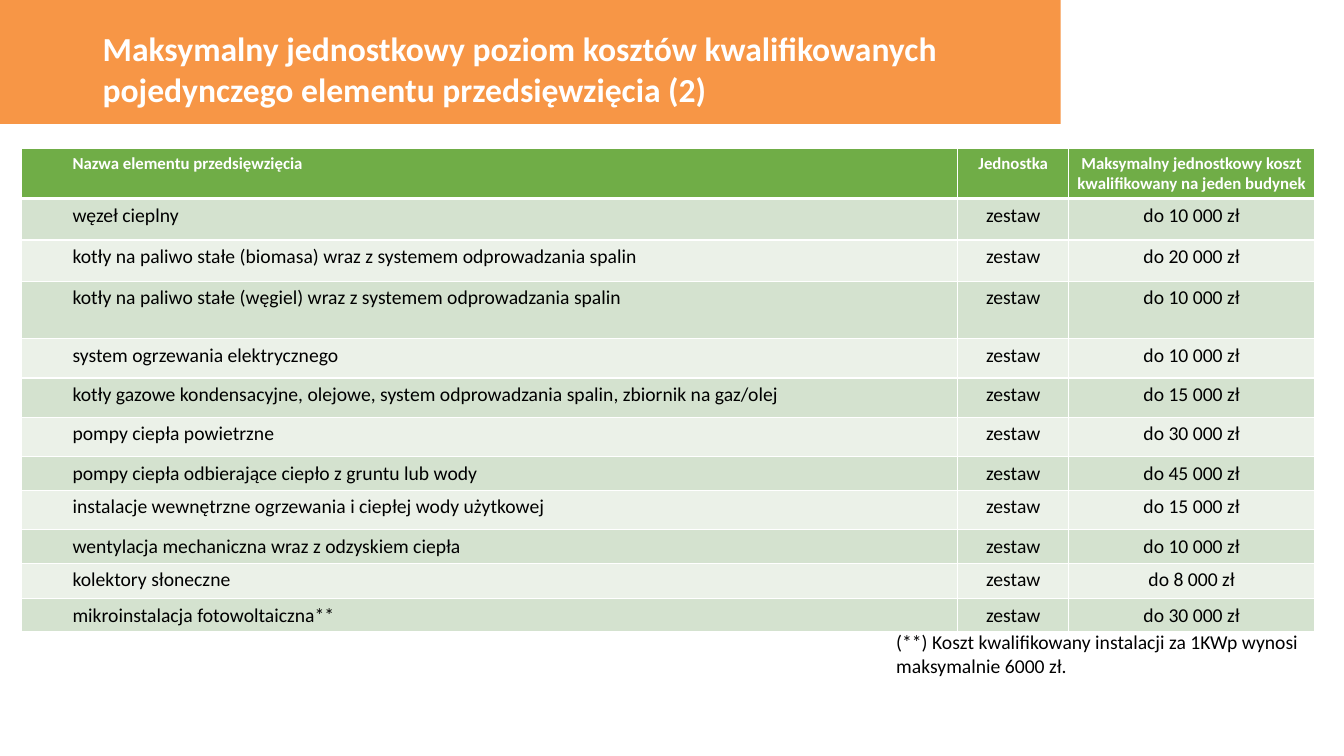
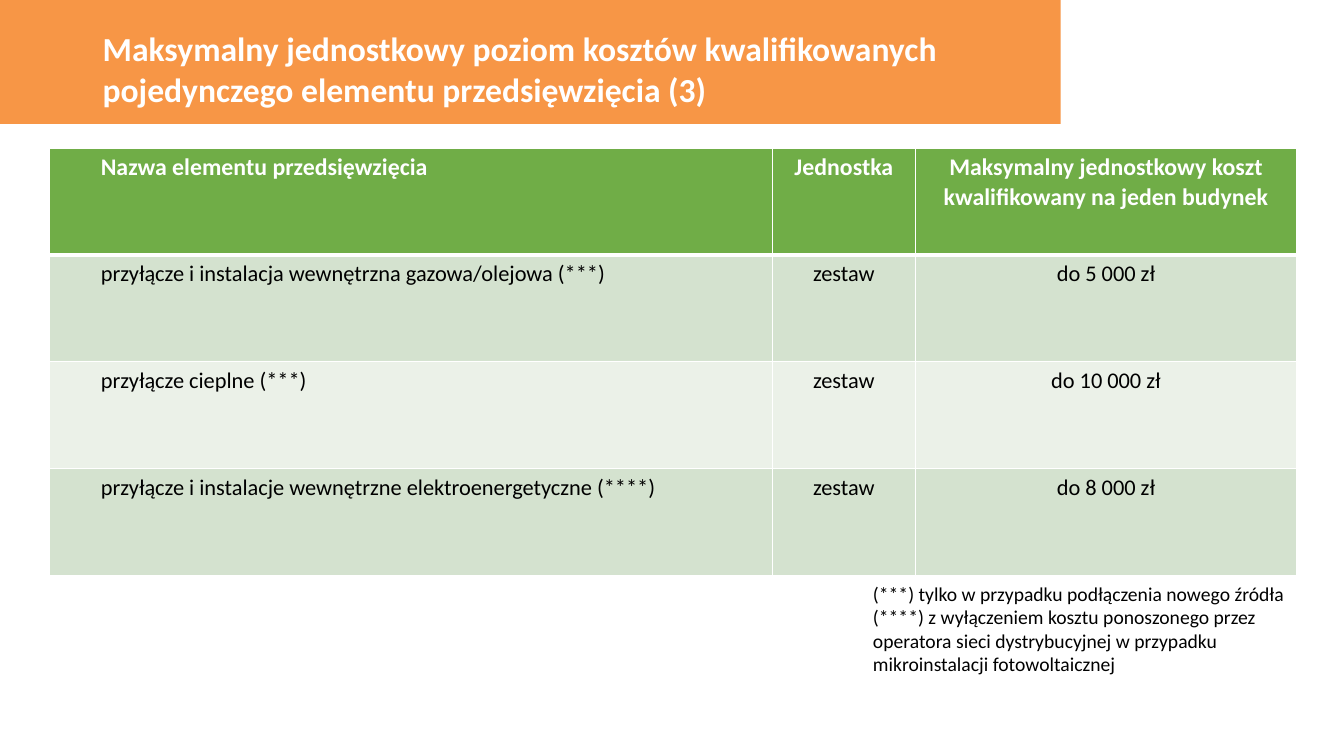
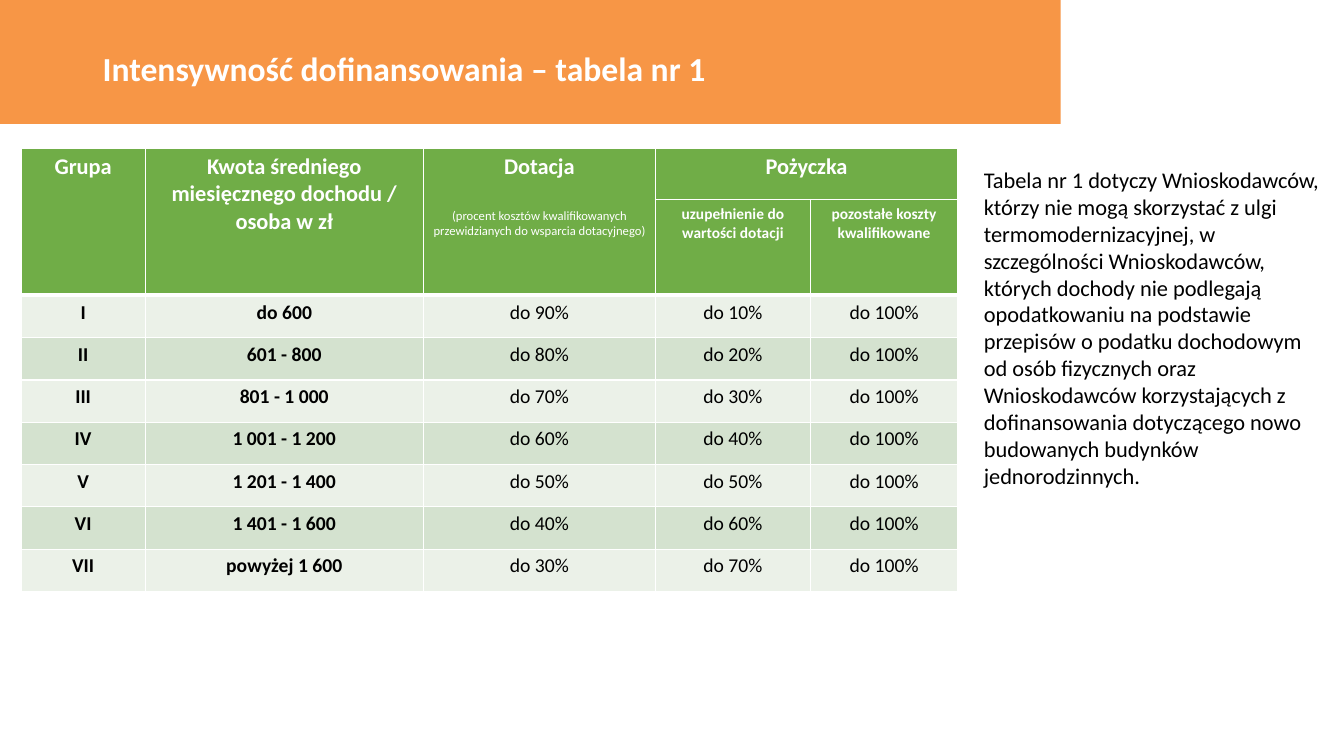
"""Build three slides on eligible cost limits and the intensity of co-financing."""
from dataclasses import dataclass
from typing import Any, Optional

from lxml import etree
from pptx import Presentation
from pptx.dml.color import RGBColor
from pptx.enum.shapes import MSO_SHAPE as Preset
from pptx.enum.text import MSO_ANCHOR as Anchor, PP_ALIGN as Align
from pptx.oxml.ns import qn
from pptx.util import Inches, Pt

COLORS = {
    "band": "F79646",
    "head": "70AD47",
    "dark_row": "D4E2CF",
    "light_row": "EBF1E8",
    "white": "FFFFFF",
    "ink": "000000",
}
FONT = "Calibri"
TABLE_TOP = 1.47
THIN, THICK = 0.96, 3
CELL_FORMAT = {
    "margin_left": Inches(0.01),
    "margin_right": Inches(0.01),
    "margin_top": Inches(0.05),
    "margin_bottom": Inches(0.05),
    "vertical_anchor": Anchor.TOP,
}
BOX_FORMAT = {
    "margin_left": Inches(0.1),
    "margin_right": Inches(0.1),
    "margin_top": Inches(0.05),
    "margin_bottom": Inches(0.05),
    "word_wrap": True,
}


@dataclass(frozen=True)
class Line:
    text: str
    size: float
    bold: bool = False
    color: str = "ink"
    before: float = 0


@dataclass(frozen=True)
class Note:
    left: float
    top: float
    width: float
    height: float
    lines: list[Line]


@dataclass(frozen=True)
class CostTable:
    left: float
    widths: list[float]
    heights: list[float]
    head: list[list[list[Line]]]
    body: list[list[str]]
    body_size: float
    bold_columns: int = 0
    name_indent: Optional[float] = None
    merges: tuple[tuple[int, int, int, int], ...] = ()


@dataclass(frozen=True)
class Page:
    title: str
    table: CostTable
    note: Note


def apply_format(target: Any, values: dict[str, Any]) -> None:
    for attribute, value in values.items():
        setattr(target, attribute, value)


def rgb(color: str) -> RGBColor:
    return RGBColor.from_string(COLORS[color])


def write_lines(frame: Any, lines: list[Line], align: Align = Align.LEFT) -> None:
    for index, line in enumerate(lines):
        paragraph = frame.paragraphs[0] if index == 0 else frame.add_paragraph()
        paragraph.alignment = align
        if line.before:
            paragraph.space_before = Pt(line.before)
        run = paragraph.add_run()
        run.text = line.text
        apply_format(run.font, {"name": FONT, "size": Pt(line.size), "bold": line.bold})
        run.font.color.rgb = rgb(line.color)


def add_text(slide: Any, note: Note, anchor: Anchor = Anchor.TOP) -> None:
    box = slide.shapes.add_textbox(*map(Inches, (note.left, note.top, note.width, note.height)))
    apply_format(box.text_frame, BOX_FORMAT | {"vertical_anchor": anchor})
    write_lines(box.text_frame, note.lines)


def add_title(slide: Any, title: str) -> None:
    band = slide.shapes.add_shape(Preset.RECTANGLE, 0, 0, Inches(10.52), Inches(1.23))
    band.shadow.inherit = False
    band.fill.solid()
    band.fill.fore_color.rgb = rgb("band")
    band.line.fill.background()
    add_text(slide, Note(0.92, 0.21, 9.53, 0.94, [Line(title, 24, True, "white")]), Anchor.MIDDLE)


def set_borders(cell: Any, top: float, bottom: float) -> None:
    properties = cell._tc.get_or_add_tcPr()
    for tag, width in (("lnL", THIN), ("lnR", THIN), ("lnT", top), ("lnB", bottom)):
        edge = etree.SubElement(properties, qn(f"a:{tag}"), w=str(Pt(width)))
        fill = etree.SubElement(edge, qn("a:solidFill"))
        etree.SubElement(fill, qn("a:srgbClr"), val=COLORS["white"])


def add_cost_table(slide: Any, spec_table: CostTable) -> None:
    head_count = len(spec_table.head)
    body = [
        [[Line(text, spec_table.body_size, column < spec_table.bold_columns)]
         for column, text in enumerate(row)]
        for row in spec_table.body
    ]
    rows = spec_table.head + body
    grid = slide.shapes.add_table(
        len(rows), len(spec_table.widths), Inches(spec_table.left), Inches(TABLE_TOP),
        Inches(sum(spec_table.widths)), Inches(sum(spec_table.heights)),
    ).table
    for column, width in zip(grid.columns, spec_table.widths):
        column.width = Inches(width)
    for row, height in zip(grid.rows, spec_table.heights):
        row.height = Inches(height)
    for first_row, first_column, last_row, last_column in spec_table.merges:
        grid.cell(first_row, first_column).merge(grid.cell(last_row, last_column))

    for row_index, row in enumerate(rows):
        stripe = "dark_row" if row_index % 2 else "light_row"
        for column_index, lines in enumerate(row):
            cell = grid.cell(row_index, column_index)
            closes_head = row_index + cell.span_height == head_count
            set_borders(
                cell,
                THICK if row_index == head_count else THIN,
                THICK if closes_head else THIN,
            )
            cell.fill.solid()
            cell.fill.fore_color.rgb = rgb("head" if row_index < head_count else stripe)
            apply_format(cell, CELL_FORMAT)
            is_name = column_index == 0 and spec_table.name_indent is not None
            if is_name:
                cell.margin_left = Inches(spec_table.name_indent)
            write_lines(cell.text_frame, lines, Align.LEFT if is_name else Align.CENTER)


def head_line(text: str, size: float) -> list[Line]:
    return [Line(text, size, True, "white")]


def limits_table(left: float, widths: list[float], heights: list[float], head_size: float,
                 body_size: float, limits: list[tuple[str, str]]) -> CostTable:
    headings = (
        "Nazwa elementu przedsięwzięcia",
        "Jednostka",
        "Maksymalny jednostkowy koszt kwalifikowany na jeden budynek",
    )
    return CostTable(
        left, widths, heights,
        head=[[head_line(heading, head_size) for heading in headings]],
        body=[[element, "zestaw", f"do {limit} zł"] for element, limit in limits],
        body_size=body_size,
        name_indent=0.51,
    )


LIMITS_TITLE = "Maksymalny jednostkowy poziom kosztów kwalifikowanych pojedynczego elementu przedsięwzięcia"

HEATING_LIMITS = limits_table(
    0.21, [9.29, 1.1, 2.44],
    [0.41, 0.41, 0.41, 0.57, 0.39, 0.39, 0.39, 0.31, 0.39, 0.31, 0.35, 0.33],
    12, 14,
    [
        ("węzeł cieplny", "10 000"),
        ("kotły na paliwo stałe (biomasa) wraz z systemem odprowadzania spalin", "20 000"),
        ("kotły na paliwo stałe (węgiel) wraz z systemem odprowadzania spalin", "10 000"),
        ("system ogrzewania elektrycznego", "10 000"),
        ("kotły gazowe kondensacyjne, olejowe, system odprowadzania spalin, zbiornik na gaz/olej",
         "15 000"),
        ("pompy ciepła powietrzne", "30 000"),
        ("pompy ciepła odbierające ciepło z gruntu lub wody", "45 000"),
        ("instalacje wewnętrzne ogrzewania i ciepłej wody użytkowej", "15 000"),
        ("wentylacja mechaniczna wraz z odzyskiem ciepła", "10 000"),
        ("kolektory słoneczne", "8 000"),
        ("mikroinstalacja fotowoltaiczna**", "30 000"),
    ],
)

CONNECTION_LIMITS = limits_table(
    0.49, [7.17, 1.42, 3.78], [1.06] * 4, 17, 16,
    [
        ("przyłącze i instalacja wewnętrzna gazowa/olejowa (***)", "5 000"),
        ("przyłącze cieplne (***)", "10 000"),
        ("przyłącze i instalacje wewnętrzne elektroenergetyczne (****)", "8 000"),
    ],
)

INCOME_GROUPS = [
    ("I", "do 600", 90),
    ("II", "601 - 800", 80),
    ("III", "801 - 1 000", 70),
    ("IV", "1 001 - 1 200", 60),
    ("V", "1 201 - 1 400", 50),
    ("VI", "1 401 - 1 600", 40),
    ("VII", "powyżej 1 600", 30),
]

SUPPORT_INTENSITY = CostTable(
    0.21, [1.23, 2.76, 2.3, 1.54, 1.46], [0.51, 0.95] + [0.42] * len(INCOME_GROUPS),
    head=[
        [
            head_line("Grupa", 16),
            head_line("Kwota średniego miesięcznego dochodu / osoba w zł", 16),
            head_line("Dotacja", 16) + [
                Line("(procent kosztów kwalifikowanych przewidzianych do wsparcia dotacyjnego)",
                     9, False, "white", 20),
            ],
            head_line("Pożyczka", 16),
            [],
        ],
        [
            [], [], [],
            head_line("uzupełnienie do wartości dotacji", 11),
            head_line("pozostałe koszty kwalifikowane", 11),
        ],
    ],
    body=[
        [group, income, f"do {grant}%", f"do {100 - grant}%", "do 100%"]
        for group, income, grant in INCOME_GROUPS
    ],
    body_size=14,
    bold_columns=2,
    merges=((0, 0, 1, 0), (0, 1, 1, 1), (0, 2, 1, 2), (0, 3, 0, 4)),
)

PAGES = [
    Page(
        f"{LIMITS_TITLE} (2)",
        HEATING_LIMITS,
        Note(8.79, 6.2, 4.88, 0.56, [
            Line("(**) Koszt kwalifikowany instalacji za 1KWp wynosi maksymalnie 6000 zł.", 14),
        ]),
    ),
    Page(
        f"{LIMITS_TITLE} (3)",
        CONNECTION_LIMITS,
        Note(8.56, 5.72, 4.49, 1.03, [
            Line("(***) tylko w przypadku podłączenia nowego źródła", 14),
            Line("(****) z wyłączeniem kosztu ponoszonego przez operatora sieci dystrybucyjnej "
                 "w przypadku mikroinstalacji fotowoltaicznej", 14),
        ]),
    ),
    Page(
        "Intensywność dofinansowania – tabela nr 1",
        SUPPORT_INTENSITY,
        Note(9.66, 1.6, 3.54, 3.29, [
            Line("Tabela nr 1 dotyczy Wnioskodawców, którzy nie mogą skorzystać z ulgi", 16),
            Line("termomodernizacyjnej, w szczególności Wnioskodawców, których dochody nie "
                 "podlegają opodatkowaniu na podstawie przepisów o podatku dochodowym od osób "
                 "fizycznych oraz Wnioskodawców korzystających z dofinansowania dotyczącego nowo",
                 16),
            Line("budowanych budynków jednorodzinnych.", 16),
        ]),
    ),
]


def main() -> None:
    deck = Presentation()
    apply_format(deck, {"slide_width": Inches(13.33), "slide_height": Inches(7.5)})
    for page in PAGES:
        slide = deck.slides.add_slide(deck.slide_layouts[6])
        add_title(slide, page.title)
        add_cost_table(slide, page.table)
        add_text(slide, page.note)
    deck.save("out.pptx")


if __name__ == "__main__":
    main()
